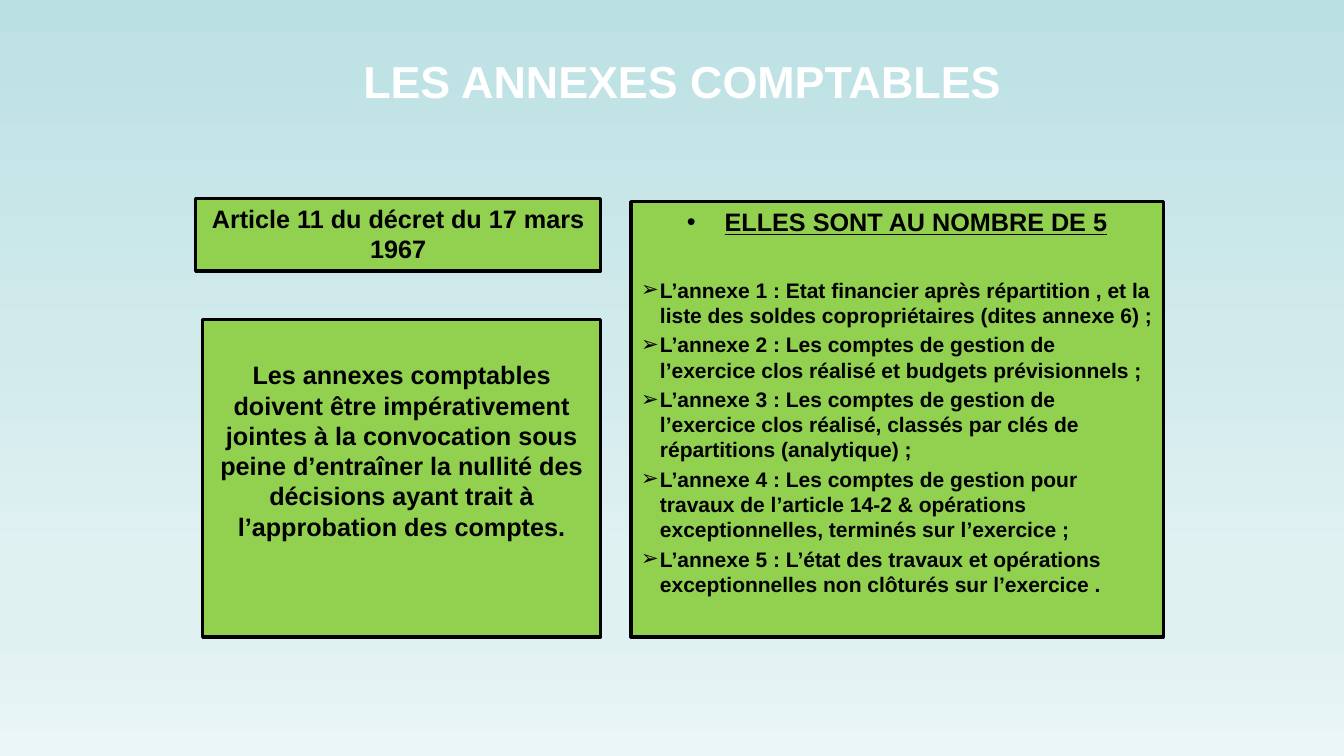
from lxml import etree
from pptx import Presentation
from pptx.dml.color import RGBColor
from pptx.enum import text as t
from pptx.oxml import ns
from pptx.util import Pt


def color(code):
    return RGBColor.from_string(code)


def bullet(para, char, indent):
    """Give a paragraph a bullet with a hanging indent in points."""
    props = para._p.get_or_add_pPr()
    props.set("marL", str(Pt(indent)))
    props.set("indent", str(-Pt(indent)))
    etree.SubElement(props, ns.qn("a:buFont")).set("typeface", "Arial")
    etree.SubElement(props, ns.qn("a:buChar")).set("char", char)


deck = Presentation()
deck.slide_width, deck.slide_height = Pt(960), Pt(540)
slide = deck.slides.add_slide(deck.slide_layouts[4])

# Background gradient, top to bottom
fill = slide.background.fill
fill.gradient()
fill.gradient_angle = 270
stops = next(slide.element.iter(ns.qn("a:gsLst")))
for stop in list(stops):
    stops.remove(stop)
for pos, code in [(0, "BBE0E3"), (45, "D1EAEC"), (74, "E0F1F2"),
                  (83, "E0F1F2"), (100, "EBF6F7")]:
    stop = etree.SubElement(stops, ns.qn("a:gs"), pos=str(pos * 1000))
    etree.SubElement(stop, ns.qn("a:srgbClr"), val=code)

# Title
title = slide.shapes.title
title.left, title.top, title.width, title.height = Pt(252.7), Pt(30.2), Pt(508.3), Pt(67.7)
frame = title.text_frame
frame.text = "LES ANNEXES COMPTABLES"
frame.word_wrap = True
frame.auto_size = t.MSO_AUTO_SIZE.NONE
frame.vertical_anchor = t.MSO_ANCHOR.TOP
frame.margin_left, frame.margin_right, frame.margin_top = 0, Pt(39), Pt(8)
head = frame.paragraphs[0]
head.alignment = t.PP_ALIGN.CENTER
head.font.name, head.font.size, head.font.bold = "Arial", Pt(32), True
head.font.color.rgb = color("FFFFFF")

# Green boxes: placeholder, left, top, width, height, top margin, paragraphs
boxes = [
    (1, 139.7, 141.8, 289.4, 51.8, 3.6, ["Article 11 du décret du 17 mars 1967"]),
    (2, 450.7, 144, 380.2, 311, 3.6, [
        "ELLES SONT AU NOMBRE DE 5",
        "L’annexe 1 : Etat financier après répartition , et la liste des soldes "
        "copropriétaires (dites annexe 6) ;",
        "L’annexe 2 : Les comptes de gestion de l’exercice clos réalisé et budgets "
        "prévisionnels ;",
        "L’annexe 3 : Les comptes de gestion de l’exercice clos réalisé, classés par "
        "clés de répartitions (analytique) ;",
        "L’annexe 4 : Les comptes de gestion pour travaux de l’article 14-2 & "
        "opérations exceptionnelles, terminés sur l’exercice ;",
        "L’annexe 5 : L’état des travaux et opérations exceptionnelles non clôturés "
        "sur l’exercice .",
    ]),
    (3, 144.7, 228.2, 284.4, 226.8, 28.8, [
        "Les annexes comptables doivent être impérativement jointes à la convocation "
        "sous peine d’entraîner la nullité des décisions ayant trait à l’approbation "
        "des comptes.",
    ]),
]
for idx, left, top, width, height, margin, lines in boxes:
    box = slide.placeholders[idx]
    box.left, box.top, box.width, box.height = Pt(left), Pt(top), Pt(width), Pt(height)
    box.fill.solid()
    box.fill.fore_color.rgb = color("92D050")
    box.line.color.rgb = color("000000")
    box.line.width = Pt(2.25)
    frame = box.text_frame
    frame.text = "\n".join(lines)
    frame.word_wrap = True
    frame.auto_size = t.MSO_AUTO_SIZE.NONE
    frame.vertical_anchor = t.MSO_ANCHOR.TOP
    frame.margin_top = Pt(margin)
    for num, para in enumerate(frame.paragraphs):
        item = num > 0
        if idx == 2:
            bullet(para, "➢" if item else "•", 13.5 if item else 27)
        para.alignment = t.PP_ALIGN.LEFT if item else t.PP_ALIGN.CENTER
        para.space_before = Pt((0, 28.8)[num] if num < 2 else 3)
        font = para.font
        font.name, font.bold = "Arial", True
        font.size = Pt(15 if item else 18)
        font.underline = idx == 2 and not item
        font.color.rgb = color("000000")

spare = slide.placeholders[4].element
spare.getparent().remove(spare)
deck.save("out.pptx")
